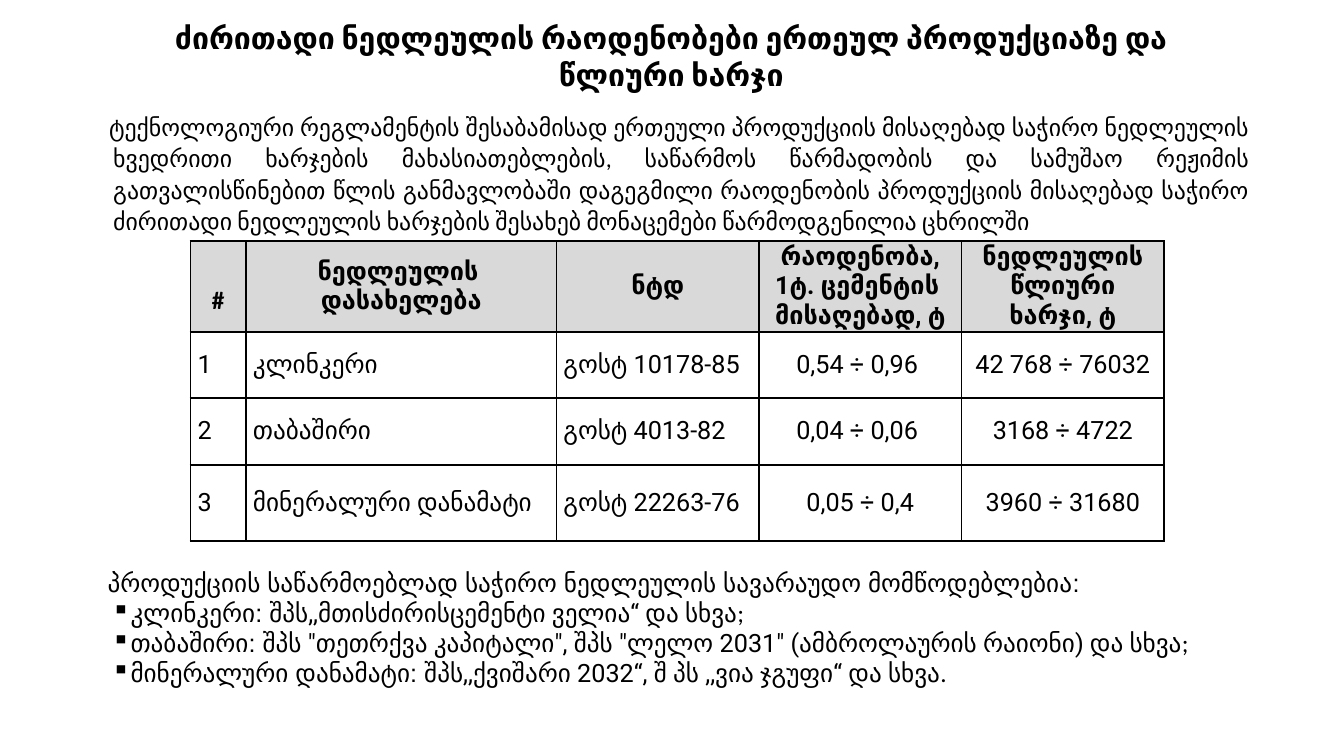
import pptx
import pptx.dml.color
import pptx.enum.text
import pptx.oxml
import pptx.oxml.ns
import pptx.util

Pt = pptx.util.Pt
ALIGN = pptx.enum.text.PP_ALIGN
ANCHOR = pptx.enum.text.MSO_ANCHOR
COLOURS = {"text": "000000", "header": "D9D9D9", "border": "000000"}

TITLE = "ძირითადი ნედლეულის რაოდენობები ერთეულ პროდუქციაზე და\vწლიური ხარჯი"
INTRO = (
    "ტექნოლოგიური რეგლამენტის შესაბამისად ერთეული პროდუქციის მისაღებად საჭირო "
    "ნედლეულის ხვედრითი ხარჯების მახასიათებლების, საწარმოს წარმადობის და სამუშაო "
    "რეჟიმის გათვალისწინებით წლის განმავლობაში დაგეგმილი რაოდენობის პროდუქციის "
    "მისაღებად საჭირო ძირითადი ნედლეულის ხარჯების შესახებ მონაცემები "
    "წარმოდგენილია ცხრილში"
)
HEADER = [
    ["#"],
    ["ნედლეულის ", "დასახელება"],
    ["ნტდ"],
    ["რაოდენობა, 1ტ. ცემენტის ", "მისაღებად, ტ"],
    ["ნედლეულის წლიური ხარჯი, ტ"],
]
MATERIALS = [
    ["1", "კლინკერი", "გოსტ 10178-85", "0,54 ÷ 0,96 ", "42 768 ÷ 76032"],
    ["2", "თაბაშირი", "გოსტ 4013-82", "0,04 ÷ 0,06 ", "3168 ÷ 4722"],
    ["3", "მინერალური დანამატი", "გოსტ 22263-76", "0,05 ÷ 0,4", "3960 ÷ 31680"],
]
COLUMN_WIDTHS = [39.6, 221.8, 144.7, 144.7, 144.7]
ROW_HEIGHTS = [58.3, 47.5, 47.5, 54.7]
SUPPLIERS_LEAD = "პროდუქციის საწარმოებლად საჭირო ნედლეულის სავარაუდო მომწოდებლებია:"
SUPPLIERS = [
    ("კლინკერი: ", "შპს,,მთისძირისცემენტი ველია“ და სხვა", ";"),
    ("თაბაშირი: ", 'შპს "თეთრქვა კაპიტალი", შპს "ლელო 2031" (ამბროლაურის რაიონი) და სხვა', ";"),
    ("მინერალური დანამატი: ", "შპს,,ქვიშარი 2032“, შ პს ,,ვია ჯგუფი“ და სხვა", "."),
]


def add_span(para, text, font="Calibri", size=18, bold=False):
    """Add a formatted run; a vertical tab in the text breaks the line."""
    for index, line in enumerate(text.split("\v")):
        if index:
            para.add_line_break()
        span = para.add_run()
        span.text = line
        span.font.name = font
        span.font.size = Pt(size)
        span.font.bold = bold
        span.font.color.rgb = pptx.dml.color.RGBColor.from_string(COLOURS["text"])


def set_indent(para, left, first, bullet=None):
    props = para._p.get_or_add_pPr()
    props.set("marL", str(Pt(left)))
    props.set("indent", str(Pt(first)))
    if bullet:
        mark = pptx.oxml.parse_xml(
            f'<a:buChar {pptx.oxml.ns.nsdecls("a")} char="{bullet}"/>')
        props.append(mark)


def add_text_frame(page, box, anchor):
    frame = page.shapes.add_textbox(*(Pt(length) for length in box)).text_frame
    frame.word_wrap = True
    frame.vertical_anchor = anchor
    return frame


def add_title(page, box):
    para = add_text_frame(page, box, ANCHOR.MIDDLE).paragraphs[0]
    para.alignment = ALIGN.CENTER
    add_span(para, TITLE, size=21.6, bold=True)


def add_intro(page, box):
    para = add_text_frame(page, box, ANCHOR.TOP).paragraphs[0]
    para.alignment = ALIGN.JUSTIFY
    para.line_spacing = 1.1
    para.space_before = Pt(3.4)
    set_indent(para, 27, -3)
    add_span(para, INTRO, size=17)


def set_borders(cell):
    props = cell._tc.get_or_add_tcPr()
    for index, side in enumerate(("lnL", "lnR", "lnT", "lnB")):
        line = pptx.oxml.parse_xml(
            f'<a:{side} {pptx.oxml.ns.nsdecls("a")} w="{Pt(1.5)}"><a:solidFill>'
            f'<a:srgbClr val="{COLOURS["border"]}"/></a:solidFill></a:{side}>')
        props.insert(index, line)


def fill_cell(cell, lines, is_header, align):
    cell.margin_left = cell.margin_right = Pt(5)
    cell.margin_top = cell.margin_bottom = 0
    cell.vertical_anchor = ANCHOR.MIDDLE
    if is_header:
        cell.fill.solid()
        cell.fill.fore_color.rgb = pptx.dml.color.RGBColor.from_string(COLOURS["header"])
    else:
        cell.fill.background()
    set_borders(cell)
    for index, line in enumerate(lines):
        frame = cell.text_frame
        para = frame.add_paragraph() if index else frame.paragraphs[0]
        para.alignment = align
        add_span(para, line, font="Calibri" if line == "#" else "Roboto", bold=is_header)


def add_materials_table(page, left, top):
    rows = [HEADER] + [[[text] for text in row] for row in MATERIALS]
    table = page.shapes.add_table(
        len(rows), len(HEADER), Pt(left), Pt(top),
        Pt(sum(COLUMN_WIDTHS)), Pt(sum(ROW_HEIGHTS))).table
    table.first_row = table.horz_banding = False
    for column, width in zip(table.columns, COLUMN_WIDTHS):
        column.width = Pt(width)
    for row_index, (row, height) in enumerate(zip(rows, ROW_HEIGHTS)):
        table.rows[row_index].height = Pt(height)
        for column_index, lines in enumerate(row):
            is_header = row_index == 0
            centred = is_header or column_index > 2
            fill_cell(table.cell(row_index, column_index), lines, is_header,
                      ALIGN.CENTER if centred else ALIGN.LEFT)
    # The number sign sits one line lower than the other headings
    table.cell(0, 0).margin_top = Pt(21)


def add_suppliers(page, box):
    frame = add_text_frame(page, box, ANCHOR.MIDDLE)
    lead = frame.paragraphs[0]
    lead.alignment = ALIGN.JUSTIFY
    set_indent(lead, 33, 0)
    add_span(lead, SUPPLIERS_LEAD, font="Arial")
    for material, companies, ending in SUPPLIERS:
        para = frame.add_paragraph()
        para.alignment = ALIGN.JUSTIFY
        set_indent(para, 47.5, -11.5, bullet="▪")
        add_span(para, material, font="Arial")
        add_span(para, companies, font="Roboto")
        add_span(para, ending)


def main():
    deck = pptx.Presentation()
    deck.slide_width, deck.slide_height = Pt(960), Pt(540)
    page = deck.slides.add_slide(deck.slide_layouts[6])
    # Heading and introduction
    add_title(page, (46.8, 20.9, 865.4, 38.2))
    add_intro(page, (46.8, 74.9, 852.5, 103))
    # Raw material quantities
    add_materials_table(page, 136.1, 172.1)
    # Likely suppliers
    add_suppliers(page, (36.7, 401, 858.2, 94.3))
    deck.save("out.pptx")


if __name__ == "__main__":
    main()
